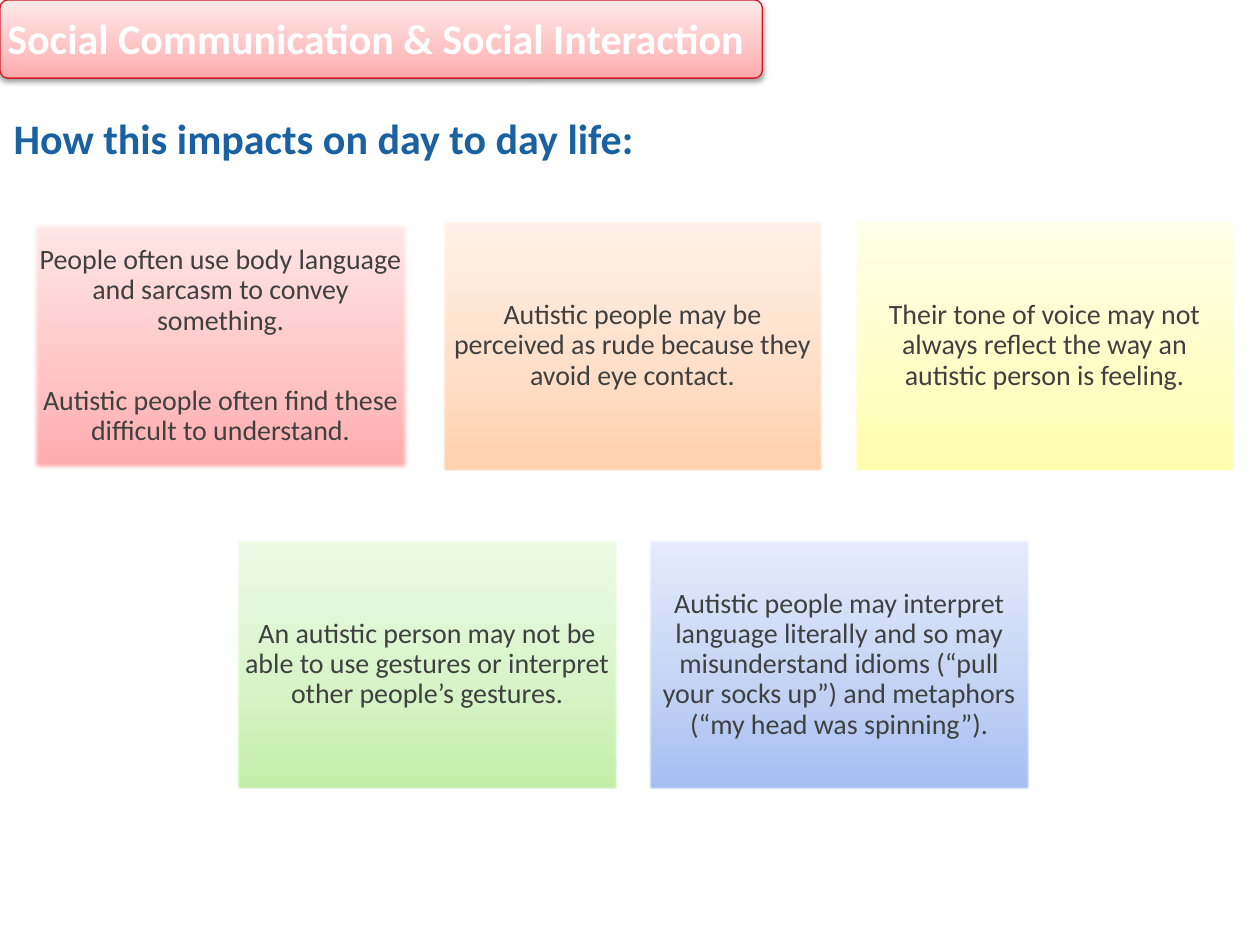
from copy import deepcopy

from lxml.etree import SubElement
from pptx import Presentation
from pptx.dml.color import RGBColor
from pptx.enum.shapes import MSO_SHAPE as Preset
from pptx.enum.text import MSO_ANCHOR as Anchor, PP_ALIGN as Align
from pptx.oxml.ns import qn
from pptx.util import Inches, Pt

PINK = ("FFA9AA", "FFC2C3", "FFE8E8")
ORANGE = ("FFD0AC", "FFDDC4", "FFF2E9")
YELLOW = ("FFFDAB", "FFFEC4", "FFFFE9")
GREEN = ("C2EFA8", "D4F3C3", "EEFBE7")
BLUE = ("A3BCF1", "BFD0F4", "E6ECFC")
STOP_POSITIONS = (0, 0.35, 1)

CARD_WIDTH, CARD_HEIGHT = 3.02, 1.99
COLUMN_STEP, ROW_STEP = 3.27, 2.53
GRID_TOP = 1.75
# Each row: left edge, then its cards as (colours, soft edge in points, paragraphs)
CARD_ROWS = [
    (0.24, [
        (PINK, 2.5, ["People often use body language and sarcasm to convey something.",
                     "Autistic people often find these difficult to understand."]),
        (ORANGE, 1, ["Autistic people may be perceived as rude because they avoid eye contact."]),
        (YELLOW, 1, ["Their tone of voice may not always reflect the way an autistic person is feeling."]),
    ]),
    (1.88, [
        (GREEN, 1, ["An autistic person may not be able to use gestures or interpret "
                    "other people’s gestures."]),
        (BLUE, 1, ["Autistic people may interpret language literally and so may misunderstand "
                   "idioms (“pull your socks up”) and metaphors (“my head was spinning”)."]),
    ]),
]


def color(value):
    return RGBColor.from_string(value)


class SlideBuilder:
    font_name = "Calibri"
    heading_size = Pt(24)
    body_size = Pt(16)
    body_color = "404040"

    def __init__(self, slide):
        self.slide = slide

    def shape(self, preset, left, top, width, height, colors):
        """Add a shape shaded from the first colour at the bottom to the last at the top."""
        shape = self.slide.shapes.add_shape(
            preset, Inches(left), Inches(top), Inches(width), Inches(height))
        shape.shadow.inherit = False
        shape.fill.gradient()
        shape.fill.gradient_angle = 90
        stop_list = shape._element.spPr.find(qn("a:gradFill")).find(qn("a:gsLst"))
        stop_list.append(deepcopy(stop_list[0]))
        for stop, position, value in zip(shape.fill.gradient_stops, STOP_POSITIONS, colors):
            stop.position = position
            stop.color.rgb = color(value)
        return shape

    def effect(self, shape, tag, **attributes):
        effects = shape._element.spPr.find(qn("a:effectLst"))
        return SubElement(effects, qn(tag), {name: str(value) for name, value in attributes.items()})

    def style(self, paragraph, size, value, bold=False):
        for run in paragraph.runs:
            run.font.name = self.font_name
            run.font.size = size
            run.font.bold = bold
            run.font.color.rgb = color(value)

    def card(self, left, top, colors, soft_edge, texts):
        shape = self.shape(Preset.RECTANGLE, left, top, CARD_WIDTH, CARD_HEIGHT, colors)
        shape.line.fill.background()
        self.effect(shape, "a:softEdge", rad=int(Pt(soft_edge)))
        frame = shape.text_frame
        frame.word_wrap = True
        frame.vertical_anchor = Anchor.MIDDLE
        frame.margin_left = frame.margin_right = Inches(0.06)
        frame.margin_top = frame.margin_bottom = Inches(0.06)
        frame.text = "\n".join(texts)
        for paragraph in frame.paragraphs:
            paragraph.alignment = Align.CENTER
            paragraph.line_spacing = 0.9
            self.style(paragraph, self.body_size, self.body_color)
        for paragraph in frame.paragraphs[:-1]:
            paragraph.space_after = Pt(28.5)

    def banner(self, left, top, width, height, colors, line_color):
        shape = self.shape(Preset.ROUNDED_RECTANGLE, left, top, width, height, colors)
        shape.adjustments[0] = 0.1
        shape.line.color.rgb = color(line_color)
        shape.line.width = Pt(0.75)
        shadow = self.effect(shape, "a:outerShdw", blurRad=int(Pt(3.1)), dist=int(Pt(1.6)),
                             dir=90 * 60000, rotWithShape=0)
        shade = SubElement(shadow, qn("a:srgbClr"), val="000000")
        SubElement(shade, qn("a:alpha"), val="38000")

    def heading(self, left, top, width, height, text, value):
        box = self.slide.shapes.add_textbox(
            Inches(left), Inches(top), Inches(width), Inches(height))
        frame = box.text_frame
        frame.word_wrap = False
        frame.text = text
        self.style(frame.paragraphs[0], self.heading_size, value, bold=True)


def main():
    presentation = Presentation()
    presentation.slide_width = Inches(10)
    presentation.slide_height = Inches(7.5)
    builder = SlideBuilder(presentation.slides.add_slide(presentation.slide_layouts[6]))

    builder.heading(0.01, 0.84, 5.38, 0.5, "How this impacts on day to day life:", "1A61A2")
    for row, (row_left, cards) in enumerate(CARD_ROWS):
        for column, (colors, soft_edge, texts) in enumerate(cards):
            builder.card(row_left + column * COLUMN_STEP, GRID_TOP + row * ROW_STEP,
                         colors, soft_edge, texts)
    builder.banner(0, 0, 6.05, 0.62, PINK, "D31A24")
    builder.heading(-0.04, 0.05, 6.05, 0.87, "Social Communication & Social Interaction", "FFFFFF")

    presentation.save("out.pptx")


if __name__ == "__main__":
    main()
